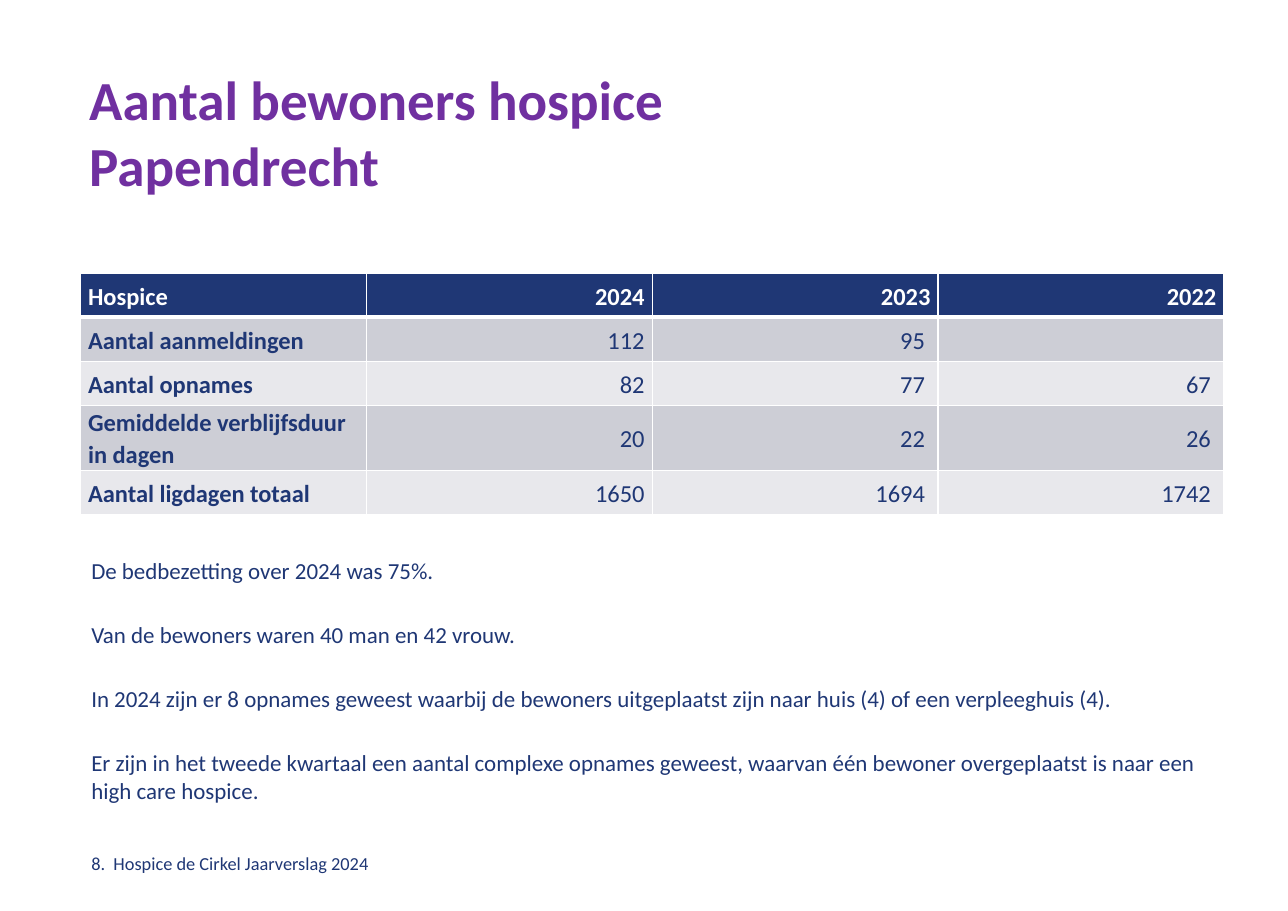
from pptx import Presentation
from pptx.dml.color import RGBColor
from pptx.enum.text import MSO_ANCHOR as Anchor, PP_ALIGN as Align
from pptx.oxml.ns import qn
from pptx.util import Inches, Pt
from lxml.etree import SubElement

NAVY, PURPLE, WHITE = "1F3775", "7030A0", "FFFFFF"
BANDS = ["CDCED6", "E8E8EC"]
LEFT, WIDTH = 0.73, 10.38
ROW_HEIGHTS = [0.4, 0.4, 0.4, 0.59, 0.4]
ROWS = [
    ["Hospice", "2024", "2023", "2022"],
    ["Aantal aanmeldingen", "112", "95 ", ""],
    ["Aantal opnames", "82", "77 ", "67 "],
    ["Gemiddelde verblijfsduur in dagen", "20", "22 ", "26 "],
    ["Aantal ligdagen totaal", "1650", "1694 ", "1742 "],
]
REMARKS = [
    "De bedbezetting over 2024 was 75%.",
    "Van de bewoners waren 40 man en 42 vrouw.",
    "In 2024 zijn er 8 opnames geweest waarbij de bewoners uitgeplaatst zijn "
    "naar huis (4) of een verpleeghuis (4).",
    "Er zijn in het tweede kwartaal een aantal complexe opnames geweest, waarvan "
    "één bewoner overgeplaatst is naar een high care hospice.",
]


def color(value):
    return RGBColor.from_string(value)


def add_span(para, text, size, fill, bold=False):
    span = para.add_run()
    span.text = text
    span.font.name = "Calibri"
    span.font.size = Pt(size)
    span.font.bold = bold
    span.font.color.rgb = color(fill)


def add_box(page, left, top, width, height, inset=True):
    box = page.shapes.add_textbox(Inches(left), Inches(top), Inches(width), Inches(height))
    frame = box.text_frame
    frame.word_wrap = True
    if not inset:
        frame.margin_left = frame.margin_right = 0
        frame.margin_top = frame.margin_bottom = 0
    return frame


def add_title(page, lines):
    para = add_box(page, 0.81, 0.59, 7.09, 1.02, inset=False).paragraphs[0]
    for index, line in enumerate(lines):
        if index:
            para.add_line_break()
        add_span(para, line, 36, PURPLE, bold=True)


def add_text(page, top, height, texts, size, gap=0):
    frame = add_box(page, LEFT, top, WIDTH, height)
    for index, text in enumerate(texts):
        para = frame.add_paragraph() if index else frame.paragraphs[0]
        if index:
            para.space_before = Pt(gap)
        add_span(para, text, size, NAVY)


def set_borders(cell, widths):
    properties = cell._tc.get_or_add_tcPr()
    for side, width in widths.items():
        line = SubElement(properties, qn(f"a:ln{side}"), w=str(Pt(width)))
        SubElement(SubElement(line, qn("a:solidFill")), qn("a:srgbClr"), val=WHITE)


def fill_cell(cell, text, row, column):
    header = row == 0
    set_borders(cell, {"L": 1, "R": 1, "T": 3 if row == 1 else 1, "B": 3 if header else 1})
    cell.fill.solid()
    cell.fill.fore_color.rgb = color(NAVY if header else BANDS[(row - 1) % 2])
    cell.vertical_anchor = Anchor.MIDDLE
    cell.margin_left = cell.margin_right = Inches(0.07)
    cell.margin_top, cell.margin_bottom = Inches(0.01), 0
    if text:
        para = cell.text_frame.paragraphs[0]
        para.alignment = Align.RIGHT if column else Align.LEFT
        para.line_spacing = 1.07
        para.space_after = Pt(8)
        add_span(para, text, 16, WHITE if header else NAVY, bold=header or column == 0)


def add_figures(page):
    table = page.shapes.add_table(
        len(ROWS), len(ROWS[0]), Inches(LEFT), Inches(2.48),
        Inches(WIDTH), Inches(sum(ROW_HEIGHTS))).table
    for row, texts in enumerate(ROWS):
        table.rows[row].height = Inches(ROW_HEIGHTS[row])
        for column, text in enumerate(texts):
            fill_cell(table.cell(row, column), text, row, column)


def main():
    deck = Presentation()
    deck.slide_width, deck.slide_height = Inches(11.69), Inches(8.27)
    page = deck.slides.add_slide(deck.slide_layouts[6])
    add_title(page, ["Aantal bewoners hospice", "Papendrecht"])
    add_figures(page)
    add_text(page, 7.69, 0.43, ["8.  Hospice de Cirkel Jaarverslag 2024"], 12)
    add_text(page, 5, 2.36, REMARKS, 15, gap=24)
    deck.save("out.pptx")


if __name__ == "__main__":
    main()
